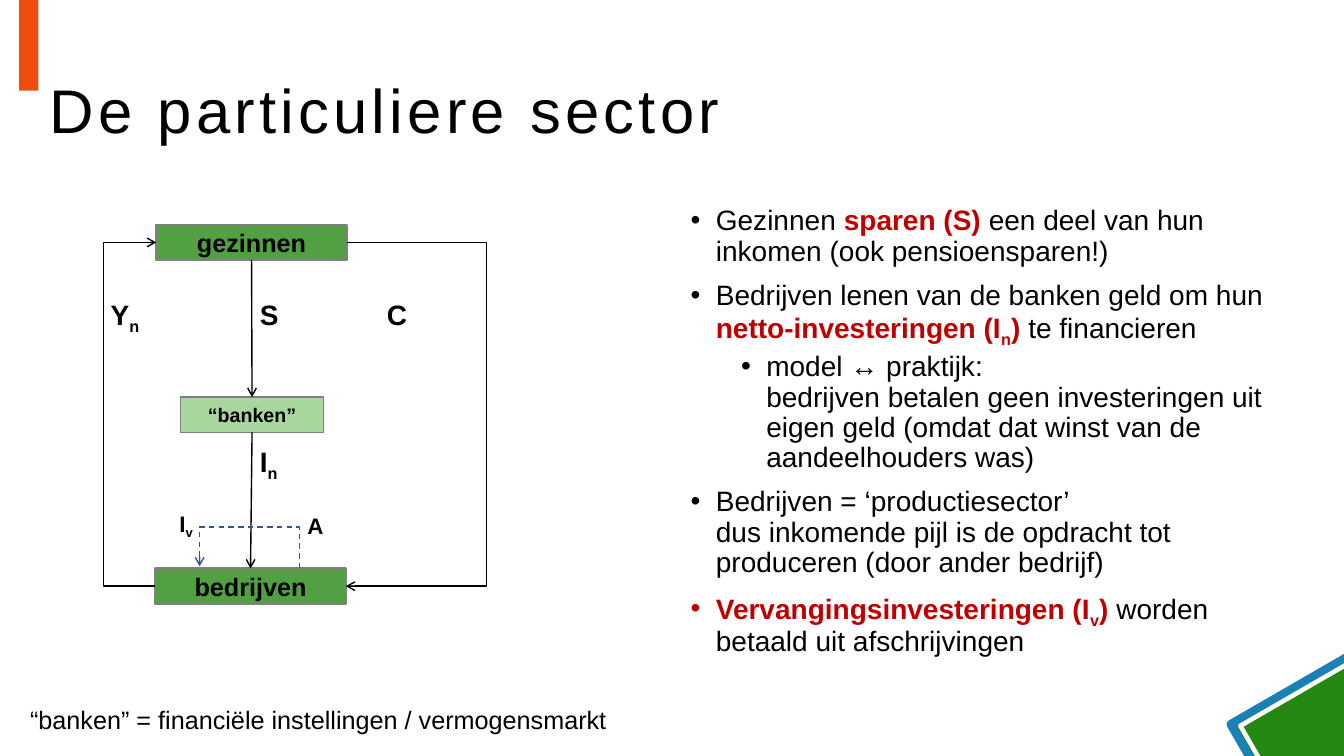
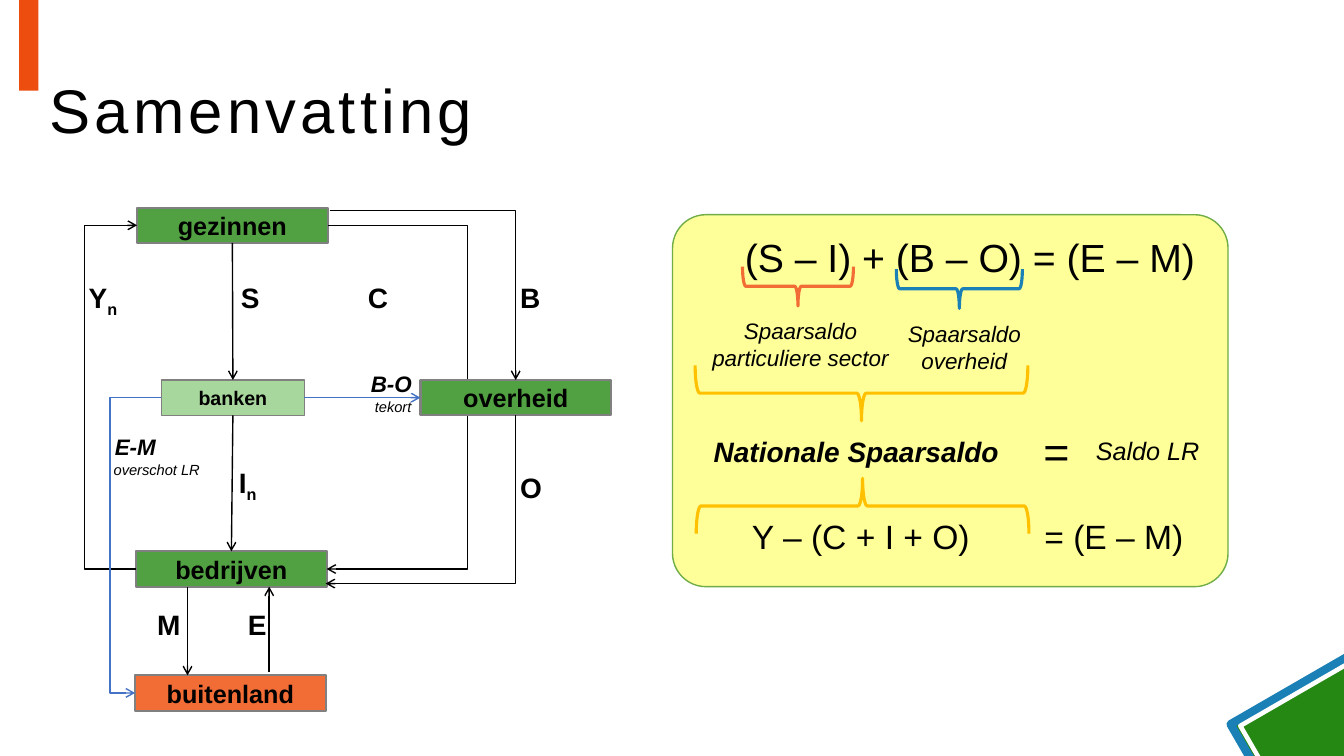
import lxml.etree
import pptx
import pptx.dml.color
import pptx.enum.dml
import pptx.enum.shapes
import pptx.enum.text
import pptx.oxml.ns
import pptx.util

PX = 9144
BLACK, RED, BLUE, GREY = "000000", "C00000", "4472C4", "808080"
GREEN, LIGHT, ORANGE, GOLD, SEA = "51A041", "A7D79D", "F26C36", "FFC000", "1A80B6"
SUB = {"baseline": -25000}
HOT = {"color": RED, "bold": True}
HOTSUB = HOT | SUB

rgb = pptx.dml.color.RGBColor.from_string
qn = pptx.oxml.ns.qn
Pt = pptx.util.Pt
KIND = pptx.enum.shapes.MSO_SHAPE
LINE = pptx.enum.shapes.MSO_CONNECTOR
ALIGN = pptx.enum.text.PP_ALIGN
MIDDLE = pptx.enum.text.MSO_ANCHOR.MIDDLE
NO_FIT = pptx.enum.text.MSO_AUTO_SIZE.NONE


def write(p, runs, **fmt):
    for text, extra in runs:
        for i, line in enumerate(text.split("\n")):
            if i:
                p.add_line_break()
            r = p.add_run()
            r.text = line
            for key, value in ({"name": "Arial", "color": BLACK} | fmt | extra).items():
                if key == "color":
                    r.font.color.rgb = rgb(value)
                elif key in ("baseline", "spc"):
                    r._r.get_or_add_rPr().set(key, str(value))
                else:
                    setattr(r.font, key, Pt(value) if key == "size" else value)


def arrow(s, start, end, color=BLACK, via=None, corner=False, tip="tailEnd"):
    kind = LINE.ELBOW if corner or via else LINE.STRAIGHT
    c = s.shapes.add_connector(kind, 0, 0, 0, 0)
    if isinstance(start[0], int):
        c.begin_x, c.begin_y = [v * PX for v in start]
    else:
        c.begin_connect(*start)
    if isinstance(end[0], int):
        c.end_x, c.end_y = [v * PX for v in end]
    else:
        c.end_connect(*end)
    c.line.color.rgb = rgb(color)
    c.line.width = Pt(1)
    spPr = c.element.spPr
    geom = spPr.find(qn("a:prstGeom"))
    if corner:
        geom.set("prst", "bentConnector2")
    if via:
        share = (via * PX - c.begin_x) / (c.end_x - c.begin_x)
        lxml.etree.SubElement(geom.find(qn("a:avLst")), qn("a:gd"),
                              name="adj1", fmla=f"val {round(share * 100000)}")
    lxml.etree.SubElement(spPr.find(qn("a:ln")), qn("a:" + tip), type="arrow")
    lxml.etree.SubElement(spPr, qn("a:effectLst"))


prs = pptx.Presentation()
prs.slide_width, prs.slide_height = 1333 * PX, 750 * PX
layout = prs.slide_layouts[1]
sector, summary = [prs.slides.add_slide(layout) for _ in range(2)]

for at, turn, fill, line, width in [
    ((1248, 671, 150, 150), 60, "258812", SEA, 6),
    ((1255, 677, 136, 136), 60, None, "FFFFFF", 3.25),
    ((19, -25, 19, 115), 0, "ED4D0F", None, 0),
]:
    sp = sector.shapes.add_shape(KIND.RECTANGLE, *[v * PX for v in at])
    sp.shadow.inherit = False
    sp.rotation = turn
    if fill:
        sp.fill.solid()
        sp.fill.fore_color.rgb = rgb(fill)
    else:
        sp.fill.background()
    if line:
        sp.line.color.rgb = rgb(line)
        sp.line.width = Pt(width)
    else:
        sp.line.fill.background()
    layout.shapes.element.append(sp.element)

title = layout.placeholders[0]
title.left, title.top, title.width, title.height = [v * PX for v in (39, 40, 1258, 145)]

panel = summary.shapes.add_shape(KIND.ROUNDED_RECTANGLE, *[v * PX for v in (667, 213, 551, 369)])
panel.adjustments[0] = 0.09
panel.shadow.inherit = False
panel.fill.solid()
panel.fill.fore_color.rgb = rgb("FFFF99")
panel.line.color.rgb = rgb("70AD47")
panel.line.width = Pt(1)
summary.shapes.element.insert(2, panel.element)

for s, heading, at, items in [
    (sector, "De particuliere sector", (675, 200, 619, 510), [
        (0, [("Gezinnen ", {}), ("sparen (S)", HOT),
             (" een deel van hun inkomen (ook pensioensparen!)", {})]),
        (0, [("Bedrijven lenen van de banken geld om hun ", {}),
             ("netto-investeringen (I", HOT), ("n", HOTSUB), (") ", HOT),
             ("te financieren", {})]),
        (1, [("model ↔ praktijk:\nbedrijven betalen geen investeringen uit eigen geld "
              "(omdat dat winst van de aandeelhouders was)", {})]),
        (0, [("Bedrijven = ‘productiesector’ \ndus inkomende pijl is de opdracht tot "
              "produceren (door ander bedrijf)", {})]),
        (0, [("Vervangingsinvesteringen (I", HOT), ("v", HOTSUB), (") ", HOT),
             ("worden betaald uit afschrijvingen", {})]),
    ]),
    (summary, "Samenvatting", (635, 232, 654, 427), [
        (None, [("(S – I) + (B – O) = (E – M)", {})]),
    ]),
]:
    tf = s.shapes.title.text_frame
    tf.auto_size = NO_FIT
    tf.vertical_anchor = MIDDLE
    p = tf.paragraphs[0]
    p.alignment = ALIGN.LEFT
    p.line_spacing = 0.9
    write(p, [(heading, {})], size=44, spc=300)

    body = s.placeholders[1]
    body.left, body.top, body.width, body.height = [v * PX for v in at]
    tf = body.text_frame
    tf.auto_size = NO_FIT
    for i, (level, runs) in enumerate(items):
        p = tf.add_paragraph() if i else tf.paragraphs[0]
        p.line_spacing = 0.9
        p.space_before = Pt(5 if level else 10)
        pPr = p._p.get_or_add_pPr()
        if level is None:
            p.alignment = ALIGN.CENTER
            pPr.set("marL", "0")
            pPr.set("indent", "0")
            lxml.etree.SubElement(pPr, qn("a:buNone"))
            write(p, runs, size=28)
        else:
            p.level = level
            pPr.set("marL", str((25 + 50 * level) * PX))
            pPr.set("indent", str(-25 * PX))
            lxml.etree.SubElement(pPr, qn("a:buChar"), char="•")
            write(p, runs, size=20)

for s, x, y, bank, extra in [
    (sector, 155, 223, "“banken”", []),
    (summary, 136, 206, "banken", [("overheid", 281, 171, GREEN), ("buitenland", -2, 464, ORANGE)]),
]:
    boxes = {}
    for name, dx, dy, fill in [("gezinnen", 0, 0, GREEN), (bank, 24, 171, LIGHT),
                               ("bedrijven", -1, 341, GREEN)] + extra:
        small = name == bank
        sp = s.shapes.add_shape(KIND.RECTANGLE, (x + dx) * PX, (y + dy) * PX,
                                (142 if small else 189) * PX, 35 * PX)
        sp.shadow.inherit = False
        sp.fill.solid()
        sp.fill.fore_color.rgb = rgb(fill)
        sp.line.color.rgb = rgb(GREY)
        sp.line.width = Pt(1 if small else 1.5)
        tf = sp.text_frame
        tf.vertical_anchor = MIDDLE
        tf.paragraphs[0].alignment = ALIGN.CENTER
        write(tf.paragraphs[0], [(name, {})], size=14 if small else 18, bold=True)
        boxes[name] = sp
    homes, banks, firms = boxes["gezinnen"], boxes[bank], boxes["bedrijven"]
    arrow(s, (homes, 1), (firms, 1), via=x - 53, tip="headEnd")
    arrow(s, (homes, 3), (firms, 3), via=x + 330)
    arrow(s, (homes, 2), (banks, 0))
    arrow(s, (banks, 2), (firms, 0))

state, abroad = boxes["overheid"], boxes["buitenland"]
summary.shapes.element.append(state.element)
arrow(summary, (327, 209), (state, 0), corner=True)
arrow(summary, (323, 579), (state, 2), corner=True, tip="headEnd")
arrow(summary, (banks, 3), (state, 1), color=BLUE)
arrow(summary, (banks, 1), (abroad, 1), color=BLUE, via=109)
arrow(summary, (186, 582), (186, 670))
arrow(summary, (267, 667), (267, 582))

outline = sector.shapes.build_freeform(297, 564, scale=PX)
outline.add_line_segments([(297, 523), (198, 523), (198, 562)], close=False)
sp = outline.convert_to_shape()
sp.shadow.inherit = False
sp.fill.background()
sp.line.color.rgb = rgb("325491")
sp.line.width = Pt(1)
sp.line.dash_style = pptx.enum.dml.MSO_LINE.DASH
lxml.etree.SubElement(sp.element.spPr.find(qn("a:ln")), qn("a:tailEnd"), type="arrow")

for at, turn, color in [
    ((827, 225, 55, 330), 270, GOLD),
    ((772, 229, 39, 110), 270, ORANGE),
    ((932, 224, 39, 125), 270, SEA),
    ((828, 337, 55, 330), 90, GOLD),
]:
    sp = summary.shapes.add_shape(KIND.LEFT_BRACE, *[v * PX for v in at])
    sp.shadow.inherit = False
    sp.rotation = turn
    sp.fill.background()
    sp.line.color.rgb = rgb(color)
    sp.line.width = Pt(2.25)

BIG = {"size": 20, "bold": True}
MID = {"size": 16, "bold": True}
FLOW = {"size": 16, "bold": True, "italic": True}
NOTE = {"size": 10.5, "italic": True}
PART = {"size": 16, "italic": True}
LEFT, CENTER, RIGHT = ALIGN.LEFT, ALIGN.CENTER, ALIGN.RIGHT

for s, text, sub, at, align, fmt in [
    (sector, "Y", "n", (100, 290, 60, 44), LEFT, BIG),
    (sector, "S", "", (248, 290, 60, 44), LEFT, BIG),
    (sector, "C", "", (374, 290, 60, 44), LEFT, BIG),
    (sector, "I", "n", (248, 436, 60, 44), LEFT, BIG),
    (sector, "A", "", (295, 503, 46, 37), LEFT, MID),
    (sector, "I", "v", (155, 501, 46, 37), RIGHT, MID),
    (sector, "“banken” = financiële instellingen / vermogensmarkt", "",
     (20, 694, 620, 40), LEFT, {"size": 18}),
    (summary, "Y", "n", (78, 273, 60, 44), LEFT, BIG),
    (summary, "S", "", (229, 273, 60, 44), LEFT, BIG),
    (summary, "C", "", (355, 273, 60, 44), LEFT, BIG),
    (summary, "B", "", (506, 273, 60, 44), LEFT, BIG),
    (summary, "I", "n", (227, 457, 60, 44), LEFT, BIG),
    (summary, "O", "", (506, 462, 60, 44), LEFT, BIG),
    (summary, "M", "", (146, 598, 60, 44), LEFT, BIG),
    (summary, "E", "", (236, 598, 60, 44), LEFT, BIG),
    (summary, "B-O", "", (358, 362, 82, 37), LEFT, FLOW),
    (summary, "E-M", "", (104, 425, 82, 37), LEFT, FLOW),
    (summary, "tekort", "", (362, 390, 70, 29), LEFT, NOTE),
    (summary, "overschot LR", "", (103, 452, 120, 29), LEFT, NOTE),
    (summary, "Spaarsaldo\nparticuliere sector", "", (686, 310, 216, 64), CENTER, PART),
    (summary, "Spaarsaldo\noverheid", "", (885, 313, 143, 64), CENTER, PART),
    (summary, "Nationale Spaarsaldo", "", (698, 426, 313, 44), LEFT, BIG | {"italic": True}),
    (summary, "=", "", (1025, 415, 47, 64), LEFT, {"size": 32}),
    (summary, "Saldo LR", "", (1077, 427, 135, 40), LEFT, {"size": 18, "italic": True}),
    (summary, "Y – (C + I + O)", "", (736, 507, 270, 50), LEFT, {"size": 24}),
    (summary, "= (E – M)", "", (1026, 507, 180, 50), LEFT, {"size": 24}),
]:
    tf = s.shapes.add_textbox(*[v * PX for v in at]).text_frame
    tf.word_wrap = True
    p = tf.paragraphs[0]
    p.alignment = align
    write(p, [(text, {})] + ([(sub, SUB)] if sub else []), **fmt)

prs.save("out.pptx")
